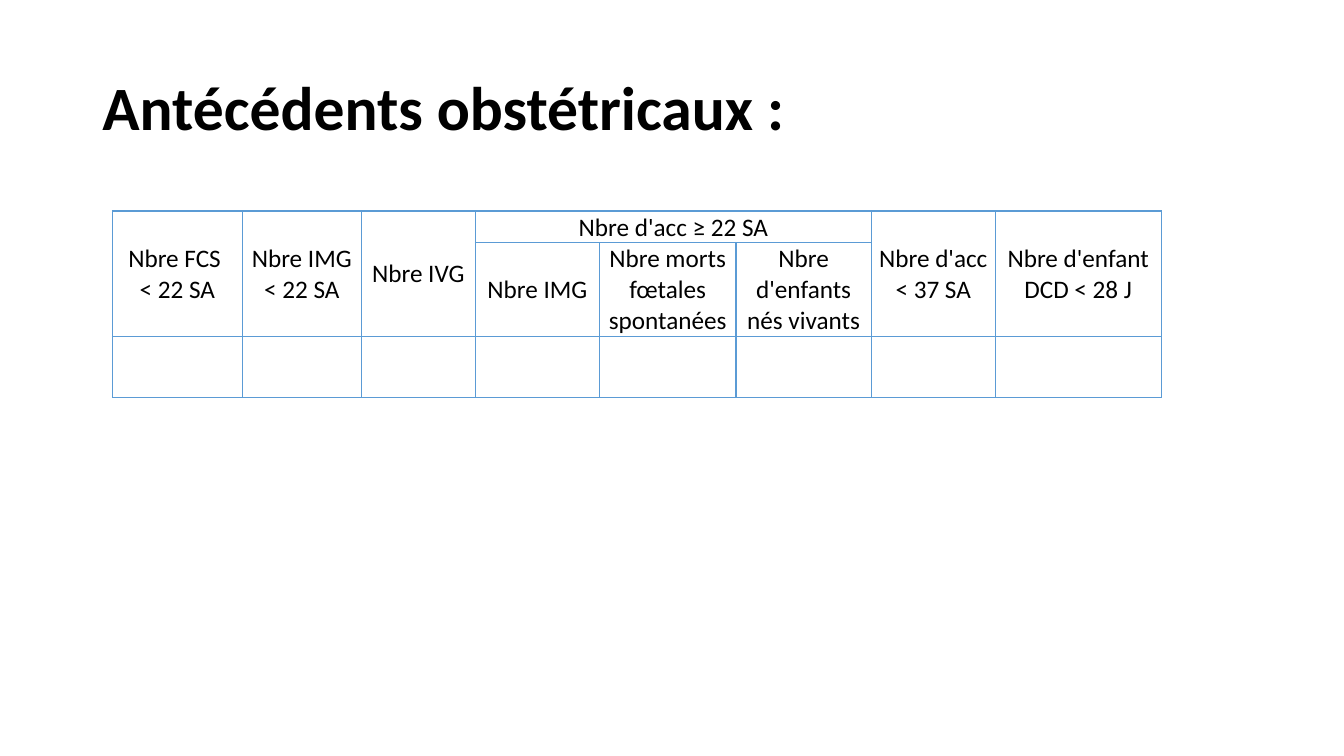
from lxml.etree import SubElement
from pptx import Presentation
from pptx.dml.color import RGBColor
from pptx.enum.text import MSO_ANCHOR as Anchor, PP_ALIGN as Align
from pptx.oxml.ns import qn
from pptx.util import Emu, Pt

BLACK = RGBColor(0x00, 0x00, 0x00)
BORDER_BLUE = RGBColor(0x5B, 0x9B, 0xD5)
EMU_PER_PX = 9525
TITLE_ONLY = 5

COLUMN_WIDTHS = [124, 113, 109, 118, 130, 129, 118, 158]
ROW_HEIGHTS = [30, 89, 58]
HEADERS = [
    (0, 0, 2, 1, "Nbre FCS \n< 22 SA"),
    (0, 1, 2, 1, "Nbre IMG < 22 SA"),
    (0, 2, 2, 1, "Nbre IVG"),
    (0, 3, 1, 3, "Nbre d'acc ≥ 22 SA"),
    (0, 6, 2, 1, "Nbre d'acc < 37 SA"),
    (0, 7, 2, 1, "Nbre d'enfant DCD < 28 J"),
    (1, 3, 1, 1, "Nbre IMG"),
    (1, 4, 1, 1, "Nbre morts fœtales spontanées"),
    (1, 5, 1, 1, "Nbre d'enfants nés vivants"),
]


def px(value):
    return Emu(value * EMU_PER_PX)


class SlideBuilder:
    font_name = "Calibri"

    def __init__(self, presentation):
        layout = presentation.slide_layouts[TITLE_ONLY]
        self.slide = presentation.slides.add_slide(layout)

    def format_paragraph(self, paragraph, size, align, bold=False):
        paragraph.alignment = align
        paragraph.font.name = self.font_name
        paragraph.font.size = Pt(size)
        paragraph.font.bold = bold
        paragraph.font.color.rgb = BLACK

    def title(self, text, left, top, width, height):
        shape = self.slide.shapes.title
        shape.left, shape.top = px(left), px(top)
        shape.width, shape.height = px(width), px(height)
        frame = shape.text_frame
        frame.text = text
        frame.vertical_anchor = Anchor.MIDDLE
        paragraph = frame.paragraphs[0]
        paragraph.line_spacing = 0.9
        self.format_paragraph(paragraph, 44, Align.LEFT, bold=True)

    def table(self, left, top, widths, heights, headers):
        table = self.slide.shapes.add_table(
            len(heights), len(widths), px(left), px(top),
            px(sum(widths)), px(sum(heights))).table
        table.first_row = table.horz_banding = False
        for column, width in zip(table.columns, widths):
            column.width = px(width)
        for row, height in zip(table.rows, heights):
            row.height = px(height)
        for cell in table.iter_cells():
            self.border(cell)
            cell.fill.background()
        for row, column, row_span, column_span, text in headers:
            cell = table.cell(row, column)
            if row_span * column_span > 1:
                cell.merge(table.cell(row + row_span - 1, column + column_span - 1))
            self.header(cell, text)

    def header(self, cell, text):
        cell.text = text
        cell.vertical_anchor = Anchor.MIDDLE
        cell.margin_left = cell.margin_right = cell.margin_top = px(1)
        cell.margin_bottom = 0
        for paragraph in cell.text_frame.paragraphs:
            self.format_paragraph(paragraph, 18, Align.CENTER)

    def border(self, cell):
        properties = cell._tc.get_or_add_tcPr()
        for side in ("lnL", "lnR", "lnT", "lnB"):
            line = SubElement(properties, qn(f"a:{side}"), w=str(Pt(1)))
            fill = SubElement(line, qn("a:solidFill"))
            SubElement(fill, qn("a:srgbClr"), val=str(BORDER_BLUE))


def main():
    presentation = Presentation()
    presentation.slide_width = px(1280)
    presentation.slide_height = px(720)
    builder = SlideBuilder(presentation)
    builder.title("Antécédents obstétricaux :", 88, 36, 1104, 139)
    builder.table(107, 201, COLUMN_WIDTHS, ROW_HEIGHTS, HEADERS)
    presentation.save("out.pptx")


if __name__ == "__main__":
    main()
